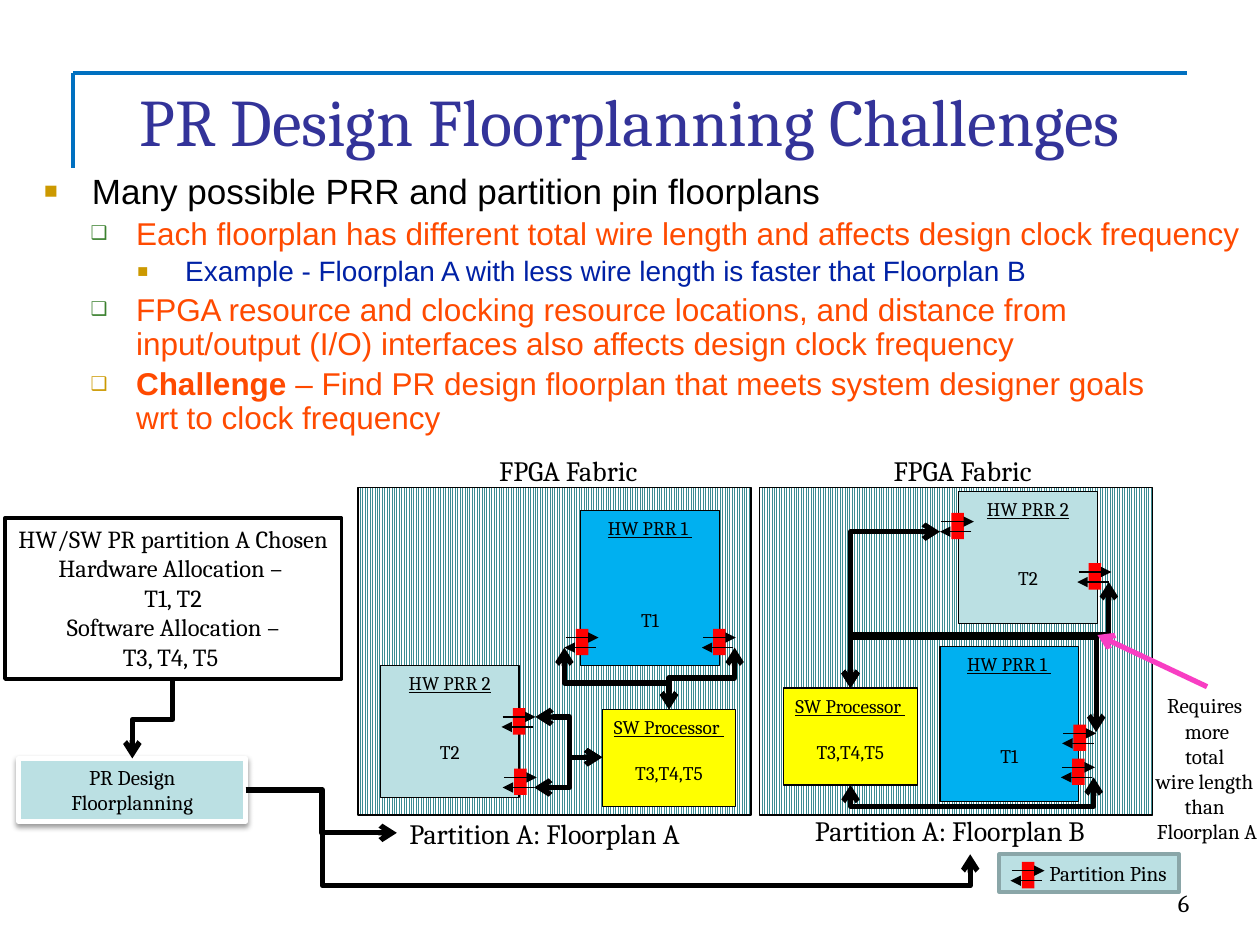
from dataclasses import dataclass
from typing import Optional

import lxml.etree
import pptx
import pptx.dml.color
import pptx.enum.dml
import pptx.enum.shapes
import pptx.enum.text
import pptx.oxml.ns
import pptx.util

Pt = pptx.util.Pt
qn = pptx.oxml.ns.qn
ALIGN = pptx.enum.text.PP_ALIGN
ANCHOR = pptx.enum.text.MSO_ANCHOR
CONNECTOR = pptx.enum.shapes.MSO_CONNECTOR
SERIF = "Cambria"
BLACK, PALE, BLUE, YELLOW = "000000", "BBE0E3", "00B0F0", "FFFF00"


@dataclass
class Bullet:
    level: int
    text: str
    mark_color: str
    bold_start: str = ""


@dataclass
class Level:
    margin: float
    hanging: float
    mark: str
    mark_size: int
    size: int
    color: str


@dataclass
class Block:
    x: float
    y: float
    width: float
    height: float
    fill: str
    name: str
    tasks: str
    gap: float


@dataclass
class Wire:
    """Elbow line; turn_x starts it horizontally, turn_y alone vertically."""
    start: tuple[float, float]
    end: tuple[float, float]
    turn_x: Optional[float] = None
    turn_y: Optional[float] = None
    double: bool = True


LEVELS = [Level(0.38, 0.38, "■", 65, 20, BLACK), Level(0.73, 0.36, "❑", 60, 18, "FF4A00"),
          Level(1.12, 0.38, "■", 65, 16, "0021A5")]
GOLD, GREEN = "CC9900", "3B812F"
BULLETS = [
    Bullet(0, "Many possible PRR and partition pin floorplans", GOLD),
    Bullet(1, "Each floorplan has different total wire length and affects design clock frequency", GREEN),
    Bullet(2, "Example - Floorplan A with less wire length is faster that Floorplan B", GOLD),
    Bullet(1, "FPGA resource and clocking resource locations, and distance from \v"
              "input/output (I/O) interfaces also affects design clock frequency", GREEN),
    Bullet(1, " – Find PR design floorplan that meets system designer goals \v"
              "wrt to clock frequency", GOLD, "Challenge"),
]


def length(inches: float):
    return pptx.util.Cm(inches * 2.54)


def rgb(value: str):
    return pptx.dml.color.RGBColor.from_string(value)


def add_element(parent, tag: str, **attributes):
    element = lxml.etree.SubElement(parent, qn(tag))
    for name, value in attributes.items():
        element.set(name, str(value))
    return element


def style(font, size: float, color: str, name: str = SERIF) -> None:
    font.size, font.name = Pt(size), name
    font.color.rgb = rgb(color)


def write(shape, text: str, size: float, align=ALIGN.CENTER, wrap: bool = True) -> None:
    frame = shape.text_frame
    frame.text, frame.word_wrap, frame.vertical_anchor = text, wrap, ANCHOR.TOP
    for paragraph in frame.paragraphs:
        paragraph.alignment = align
        style(paragraph.font, size, BLACK)


def place(shape, x: float, y: float, width: float, height: float) -> None:
    shape.left, shape.top, shape.width, shape.height = map(length, (x, y, width, height))


def add_label(slide, x, y, width, height, text: str, size: float, align=ALIGN.CENTER) -> None:
    write(slide.shapes.add_textbox(*map(length, (x, y, width, height))), text, size, align)


def add_box(slide, x, y, width, height, fill: str, line: str = "", weight: float = 0.75):
    shape = slide.shapes.add_shape(pptx.enum.shapes.MSO_SHAPE.RECTANGLE,
                                   *map(length, (x, y, width, height)))
    shape.shadow.inherit = False
    shape.fill.solid()
    shape.fill.fore_color.rgb = rgb(fill)
    if line:
        shape.line.color.rgb, shape.line.width = rgb(line), Pt(weight)
    else:
        shape.line.fill.background()
    return shape


def add_line(slide, start, end, color: str, weight: float, tail: str = "", head: str = "",
             kind=CONNECTOR.STRAIGHT):
    connector = slide.shapes.add_connector(kind, *map(length, (*start, *end)))
    connector.line.color.rgb, connector.line.width = rgb(color), Pt(weight)
    properties = connector._element.spPr
    outline = properties.find(qn("a:ln"))
    for tag, arrow in (("a:headEnd", head), ("a:tailEnd", tail)):
        if arrow:
            add_element(outline, tag, type=arrow)
    add_element(properties, "a:effectLst")
    return connector


def add_wire(slide, wire: Wire) -> None:
    (x0, y0), (x1, y1) = wire.start, wire.end
    dx, dy = x1 - x0, y1 - y0
    vertical = wire.turn_x is None
    start, end = wire.start, wire.end
    if vertical:  # lay the line out a quarter turn back, then rotate it
        center_x, center_y = (x0 + x1) / 2, (y0 + y1) / 2
        start = (center_x - dy / 2, center_y + dx / 2)
        end = (center_x + dy / 2, center_y - dx / 2)
    connector = add_line(slide, start, end, BLACK, 3, "arrow",
                         "arrow" if wire.double else "", CONNECTOR.ELBOW)
    properties = connector._element.spPr
    if vertical:
        properties.find(qn("a:xfrm")).set("rot", "5400000")
        turns = [(wire.turn_y - y0) / dy]
    else:
        turns = [(wire.turn_x - x0) / dx]
        if wire.turn_y is not None:
            turns.append((wire.turn_y - y0) / dy)
    geometry = properties.find(qn("a:prstGeom"))
    geometry.set("prst", f"bentConnector{len(turns) + 2}")
    adjustments = geometry.find(qn("a:avLst"))
    for number, turn in enumerate(turns, 1):
        add_element(adjustments, "a:gd", name=f"adj{number}", fmla=f"val {round(turn * 100000)}")


def add_pin(slide, x: float, y: float) -> None:
    add_box(slide, x, y, 0.1, 0.21, "FF0101")
    add_line(slide, (x - 0.08, y + 0.07), (x + 0.18, y + 0.07), BLACK, 0.75, "triangle")
    add_line(slide, (x + 0.16, y + 0.15), (x - 0.09, y + 0.15), BLACK, 0.75, "triangle")


def add_block(slide, block: Block) -> None:
    shape = add_box(slide, block.x, block.y, block.width, block.height, block.fill, BLACK)
    write(shape, f"{block.name}\n{block.tasks}", 11, wrap=False)
    name, tasks = shape.text_frame.paragraphs
    name.runs[0].font.underline = True
    tasks.space_before = Pt(block.gap)


def add_fabric(slide, x: float) -> None:
    fill = add_box(slide, x, 3.87, 3.12, 2.6, "FFFFFF", BLACK).fill
    fill.patterned()
    fill.pattern = pptx.enum.dml.MSO_PATTERN.LIGHT_VERTICAL
    fill.fore_color.rgb, fill.back_color.rgb = rgb("3C8C93"), rgb("FFFFFF")


def add_bullet(paragraph, bullet: Bullet) -> None:
    level = LEVELS[bullet.level]
    paragraph.text = bullet.text
    if bullet.bold_start:
        paragraph.text = ""
        for text, bold in ((bullet.bold_start, True), *((part, False) for part in bullet.text.split("\v"))):
            if paragraph.runs and paragraph.runs[-1].font.bold is False:
                paragraph.add_line_break()
            run = paragraph.add_run()
            run.text, run.font.bold = text, bold
    paragraph.level = bullet.level
    properties = paragraph._p.get_or_add_pPr()
    properties.set("marL", str(length(level.margin)))
    properties.set("indent", str(-length(level.hanging)))
    add_element(add_element(properties, "a:buClr"), "a:srgbClr", val=bullet.mark_color)
    add_element(properties, "a:buSzPct", val=level.mark_size * 1000)
    add_element(properties, "a:buFont", typeface="Arial")
    add_element(properties, "a:buChar", char=level.mark)
    paragraph.line_spacing = 0.9
    paragraph.space_before = Pt(level.size * 0.2 if bullet.level else 0)
    for run in paragraph.runs:
        style(run.font, level.size, level.color, "Arial")


def main() -> None:
    presentation = pptx.Presentation()
    presentation.slide_width, presentation.slide_height = length(10), length(7.5)
    slide = presentation.slides.add_slide(presentation.slide_layouts[1])

    # Title with its corner rule
    for end in ((9.42, 0.58), (0.58, 1.33)):
        add_line(slide, (0.58, 0.58), end, "0070C0", 2.25)
    title, body = slide.placeholders
    place(title, 0, 0.58, 10, 0.74)
    write(title, "PR Design Floorplanning Challenges", 38)
    title.text_frame.vertical_anchor = ANCHOR.MIDDLE
    style(title.text_frame.paragraphs[0].runs[0].font, 38, "333399")

    # Bulleted list
    place(body, 0.25, 1.33, 9.87, 2.2)
    frame = body.text_frame
    frame.auto_size = pptx.enum.text.MSO_AUTO_SIZE.NONE
    for index, bullet in enumerate(BULLETS):
        add_bullet(frame.add_paragraph() if index else frame.paragraphs[0], bullet)

    # Partition choice and floorplanning step
    write(add_box(slide, 0.04, 4.11, 2.67, 1.28, "FFFFFF", BLACK, 2),
          "HW/SW PR partition A Chosen\nHardware Allocation – \vT1, T2\n"
          "Software Allocation –\nT3, T4, T5 ", 14)
    step = add_box(slide, 0.15, 6.02, 1.8, 0.5, PALE, "FFFFFF", 3)
    write(step, "PR Design Floorplanning", 12)
    shadow = add_element(step._element.spPr.find(qn("a:effectLst")), "a:outerShdw",
                         blurRad=Pt(3.1), dist=Pt(1.6), dir=5400000, rotWithShape=0)
    add_element(add_element(shadow, "a:srgbClr", val=BLACK), "a:alpha", val=38000)

    # Fabrics and captions
    for fabric_x, label_x, caption_x, caption_y, letter in (
            (2.84, 3.77, 3.15, 6.43, "A"), (6.03, 6.9, 6.37, 6.41, "B")):
        add_fabric(slide, fabric_x)
        add_label(slide, label_x, 3.55, 1.48, 0.37, "FPGA Fabric", 16)
        add_label(slide, caption_x, caption_y, 2.66, 0.37,
                  f"Partition A: Floorplan {letter}", 16, ALIGN.LEFT)

    # Blocks of both floorplans
    for prr1, prr2, processor in (((4.61, 4.05), (3.02, 5.28), (4.78, 5.63)),
                                  ((7.46, 5.13), (7.61, 3.9), (6.22, 5.46))):
        add_block(slide, Block(*prr2, 1.1, 1.05, PALE, "HW PRR 2", "T2", 26))
        add_block(slide, Block(*processor, 1.06, 0.77, YELLOW, "SW Processor ", "T3,T4,T5", 13))
        add_block(slide, Block(*prr1, 1.1, 1.23, BLUE, "HW PRR 1 ", "T1", 39))

    # Pin legend and pins
    write(add_box(slide, 7.93, 6.78, 1.43, 0.3, PALE, "8AA6A8", 2), "Partition Pins", 12, ALIGN.RIGHT)
    for pin in ((4.07, 5.62), (4.57, 4.99), (5.66, 4.99), (4.08, 6.1), (8.51, 6.02),
                (8.52, 5.75), (7.55, 4.07), (8.64, 4.47), (8.11, 6.84)):
        add_pin(slide, *pin)

    # Wires: flow, floorplan A, floorplan B
    for wire in (Wire((1.37, 5.39), (1.05, 6.02), turn_y=5.71, double=False),
                 Wire((1.95, 6.27), (3.15, 6.61), 2.55, double=False),
                 Wire((1.95, 6.27), (7.7, 6.78), 2.56, 7.03, double=False),
                 Wire((5.31, 5.63), (4.48, 5.14), turn_y=5.42),
                 Wire((5.31, 5.63), (5.83, 5.14), turn_y=5.38),
                 Wire((4.78, 6.01), (4.25, 5.69), 4.52),
                 Wire((4.78, 6.01), (4.24, 6.25), 4.52),
                 Wire((8.68, 6.17), (6.75, 6.23), turn_y=6.4),
                 Wire((8.7, 5.81), (6.75, 5.46), turn_y=5.06),
                 Wire((8.8, 4.62), (6.75, 5.46), turn_y=5.04),
                 Wire((7.46, 4.22), (6.75, 5.46), turn_y=4.22)):
        add_wire(slide, wire)

    # Remark and slide number
    add_line(slide, (9.58, 5.45), (8.71, 5.04), "F83EC3", 3, "arrow")
    add_label(slide, 8.68, 5.45, 1.8, 1.31,
              "Requires \vmore\vtotal \vwire length \vthan \vFloorplan A", 12)
    add_label(slide, 7.5, 7, 2.08, 0.5, "6 ", 14, ALIGN.RIGHT)
    presentation.save("out.pptx")


if __name__ == "__main__":
    main()
